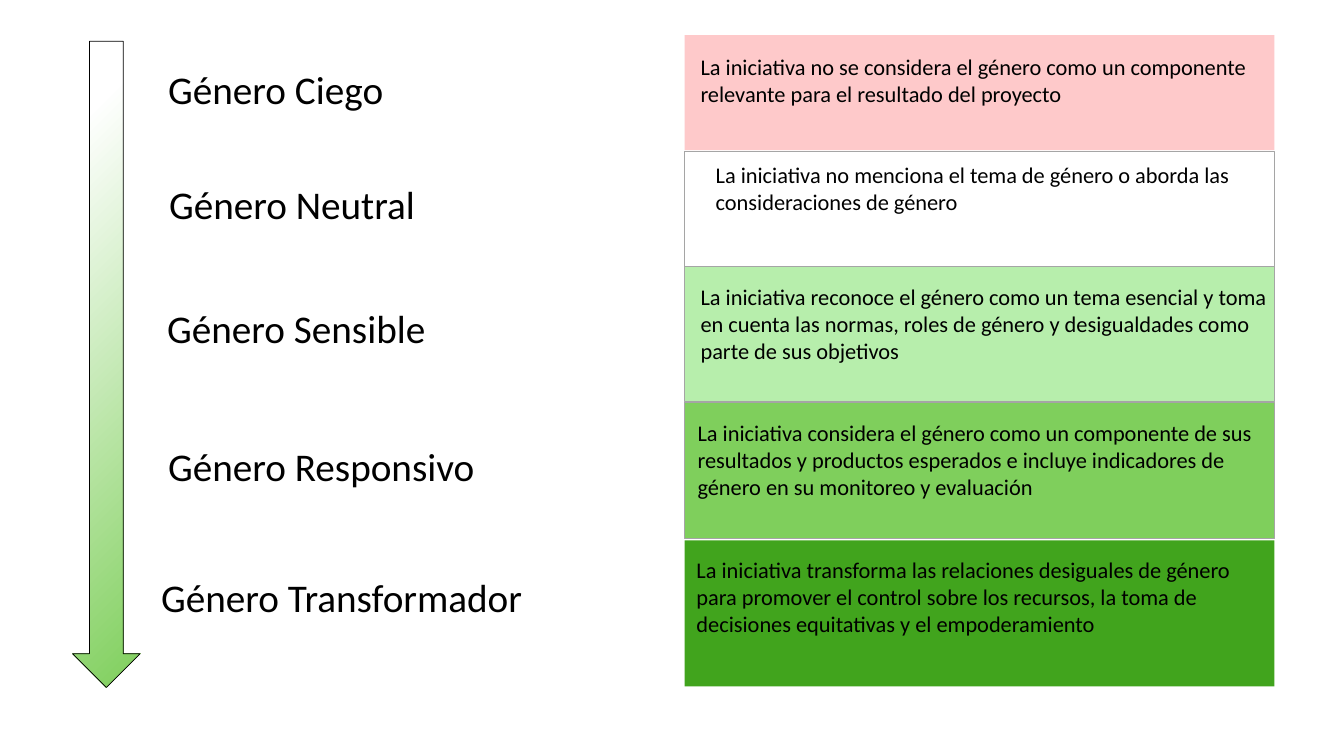
from lxml import etree
from pptx import Presentation
from pptx.dml.color import RGBColor
from pptx.enum.shapes import MSO_SHAPE as Shape
from pptx.enum.text import MSO_AUTO_SIZE as AutoSize
from pptx.oxml.ns import qn
from pptx.util import Inches, Pt

FONT = "Calibri"
BLACK = RGBColor(0x00, 0x00, 0x00)
WHITE = RGBColor(0xFF, 0xFF, 0xFF)
GREY = RGBColor(0xA5, 0xA5, 0xA5)
PINK = RGBColor(0xFE, 0xC9, 0xCA)
PALE_GREEN = RGBColor(0xB7, 0xEE, 0xAC)
GREEN = RGBColor(0x7F, 0xCF, 0x5C)
DARK_GREEN = RGBColor(0x41, 0xA4, 0x1D)

# Levels: fill, outline, block (top, height), label, label (left, top, width),
# description, description (left, top, width, height)
LEVELS = [
    (PINK, None, (0.35, 1.14), "Género Ciego", (1.57, 0.6, 2.35),
     "La iniciativa no se considera el género como un componente relevante "
     "para el resultado del proyecto", (6.85, 0.48, 5.64, 0.64)),
    (WHITE, GREY, (1.5, 1.14), "Género Neutral", (1.58, 1.74, 2.76),
     "La iniciativa no menciona el tema de género o aborda las "
     "consideraciones de género", (7, 1.55, 5.64, 0.64)),
    (PALE_GREEN, GREY, (2.64, 1.34), "Género Sensible", (1.56, 2.97, 2.79),
     "La iniciativa reconoce el género como un tema esencial y toma en cuenta "
     "las normas, roles de género y desigualdades como parte de sus objetivos",
     (6.85, 2.76, 5.85, 0.91)),
    (GREEN, GREY, (3.99, 1.35), "Género Responsivo", (1.57, 4.34, 3.27),
     "La iniciativa considera el género como un componente de sus resultados y "
     "productos esperados e incluye indicadores de género en su monitoreo y "
     "evaluación", (6.82, 4.11, 5.81, 0.91)),
    (DARK_GREEN, None, (5.36, 1.45), "Género Transformador", (1.5, 5.64, 3.82),
     "La iniciativa transforma las relaciones desiguales de género para "
     "promover el control sobre los recursos, la toma de decisiones "
     "equitativas y el empoderamiento", (6.81, 5.47, 5.83, 0.91)),
]
BLOCK_LEFT, BLOCK_WIDTH = 6.79, 5.85
LABEL_HEIGHT = 0.57
ARROW_PLACE = (0.72, 0.41, 0.67, 6.41)
ARROW_STOPS = [(0, GREEN), (0.88, WHITE)]


def add_figure(page, kind, place, outline):
    figure = page.shapes.add_shape(kind, *map(Inches, place))
    figure.shadow.inherit = False
    if outline is None:
        figure.line.fill.background()
    else:
        figure.line.color.rgb = outline
        figure.line.width = Pt(0.5)
    return figure


def add_text(page, text, place, size, wrap):
    box = page.shapes.add_textbox(*map(Inches, place))
    frame = box.text_frame
    frame.word_wrap = wrap
    frame.auto_size = AutoSize.SHAPE_TO_FIT_TEXT
    frame.text = text
    font = frame.paragraphs[0].runs[0].font
    font.name, font.size = FONT, Pt(size)
    font.color.rgb = BLACK


def add_arrow(page):
    arrow = add_figure(page, Shape.DOWN_ARROW, ARROW_PLACE, BLACK)
    arrow.fill.gradient()
    for stop, (position, color) in zip(arrow.fill.gradient_stops, ARROW_STOPS):
        stop.position = position
        stop.color.rgb = color
    # Radial gradient centred on the bottom right corner
    gradient = arrow._element.spPr.find(qn("a:gradFill"))
    gradient.remove(gradient.find(qn("a:lin")))
    radial = etree.SubElement(gradient, qn("a:path"), {"path": "circle"})
    etree.SubElement(radial, qn("a:fillToRect"), {"l": "100000", "t": "100000"})


def main():
    deck = Presentation()
    deck.slide_width, deck.slide_height = Inches(13.33), Inches(7.5)
    page = deck.slides.add_slide(deck.slide_layouts[6])

    add_arrow(page)

    # One coloured block, label and description per level
    for fill, outline, (top, height), label, label_place, text, place in LEVELS:
        block = add_figure(page, Shape.RECTANGLE,
                           (BLOCK_LEFT, top, BLOCK_WIDTH, height), outline)
        block.fill.solid()
        block.fill.fore_color.rgb = fill
        add_text(page, label, (*label_place, LABEL_HEIGHT), 28, False)
        add_text(page, text, place, 16, True)

    deck.save("out.pptx")


if __name__ == "__main__":
    main()
